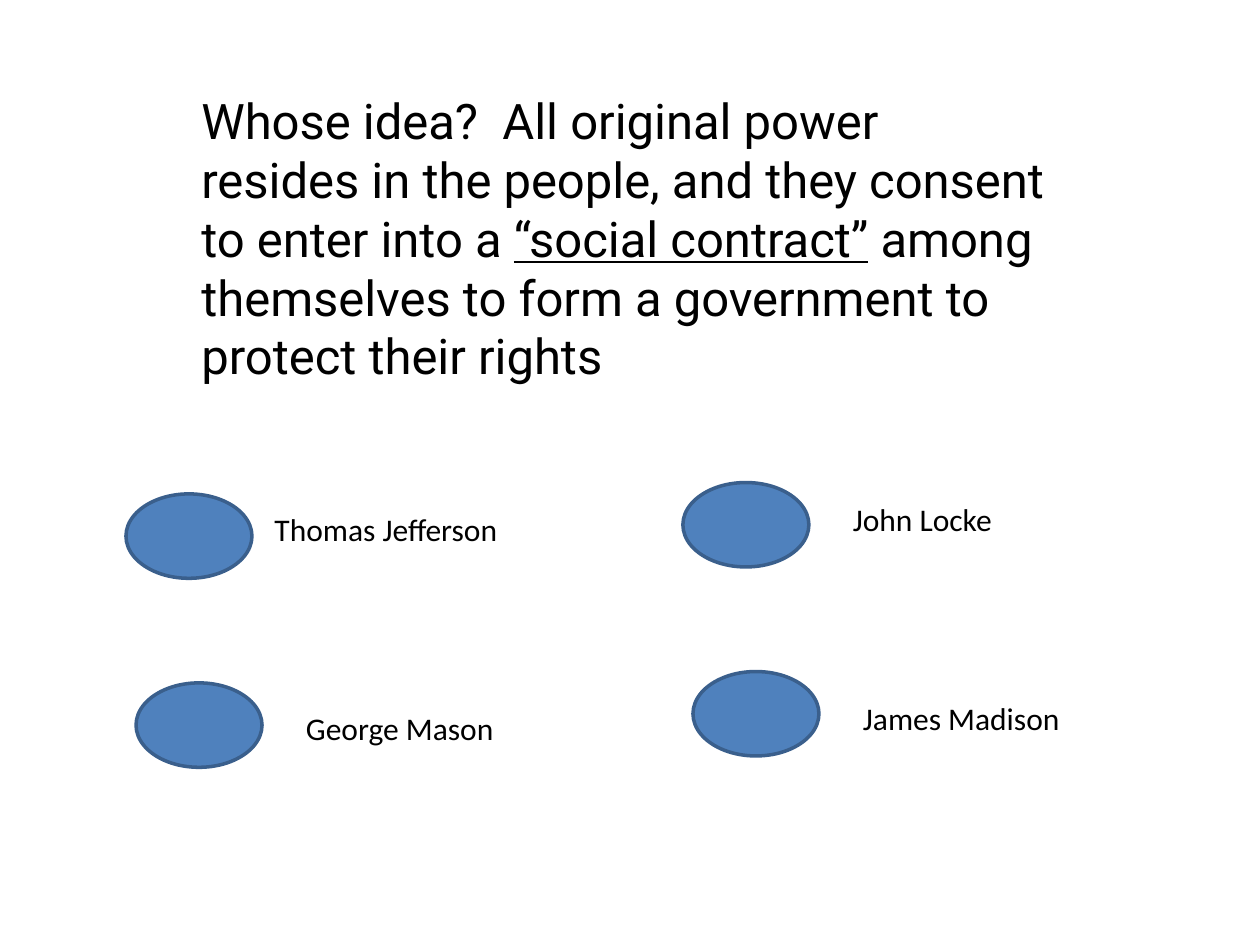
import pptx
import pptx.dml.color
import pptx.enum.shapes
import pptx.enum.text
import pptx.util

Inches = pptx.util.Inches
COLORS = {"text": "000000", "fill": "4F81BD", "line": "3A5F8C"}


def color(name):
    return pptx.dml.color.RGBColor.from_string(COLORS[name])


class Quiz:
    """Holds the style and the current slide."""

    def __init__(self, slide):
        self.slide = slide
        self.oval_size = Inches(1), Inches(0.67)
        self.edge = pptx.util.Pt(2)

    def text(self, box, parts, font, size):
        """Add a text box; parts are pairs of wording and underline."""
        frame = self.slide.shapes.add_textbox(*map(Inches, box)).text_frame
        frame.word_wrap = True
        frame.auto_size = pptx.enum.text.MSO_AUTO_SIZE.SHAPE_TO_FIT_TEXT
        para = frame.paragraphs[0]
        para.font.name = font
        para.font.size = pptx.util.Pt(size)
        para.font.color.rgb = color("text")
        for words, under in parts:
            run = para.add_run()
            run.text = words
            if under:
                run.font.underline = True

    def oval(self, left, top):
        """Add an answer button."""
        shape = self.slide.shapes.add_shape(
            pptx.enum.shapes.MSO_SHAPE.OVAL,
            Inches(left), Inches(top), *self.oval_size)
        shape.shadow.inherit = False
        shape.fill.solid()
        shape.fill.fore_color.rgb = color("fill")
        shape.line.color.rgb = color("line")
        shape.line.width = self.edge


def main():
    deck = pptx.Presentation()
    deck.slide_width, deck.slide_height = Inches(10), Inches(7.5)
    quiz = Quiz(deck.slides.add_slide(deck.slide_layouts[6]))

    # Question
    quiz.text((1.5, 0.67, 6.9, 2.46), [
        ("Whose idea?  All original power resides in the people, "
         "and they consent to enter into a ", False),
        ("“social contract”", True),
        (" among themselves to form a government to protect their rights",
         False),
    ], "Roboto", 28)

    # Answers: button position, name, name box
    answers = [
        ((1, 3.92), "Thomas Jefferson", (2.08, 4, 2.67, 0.42)),
        ((5.42, 3.83), "John Locke", (6.67, 3.92, 2.42, 0.42)),
        ((1.08, 5.42), "George Mason", (2.33, 5.58, 2.08, 0.4)),
        ((5.5, 5.33), "James Madison", (6.75, 5.5, 2.08, 0.4)),
    ]
    for spot, name, box in answers:
        quiz.oval(*spot)
        quiz.text(box, [(name, False)], "Calibri", 18)

    deck.save("out.pptx")


if __name__ == "__main__":
    main()
